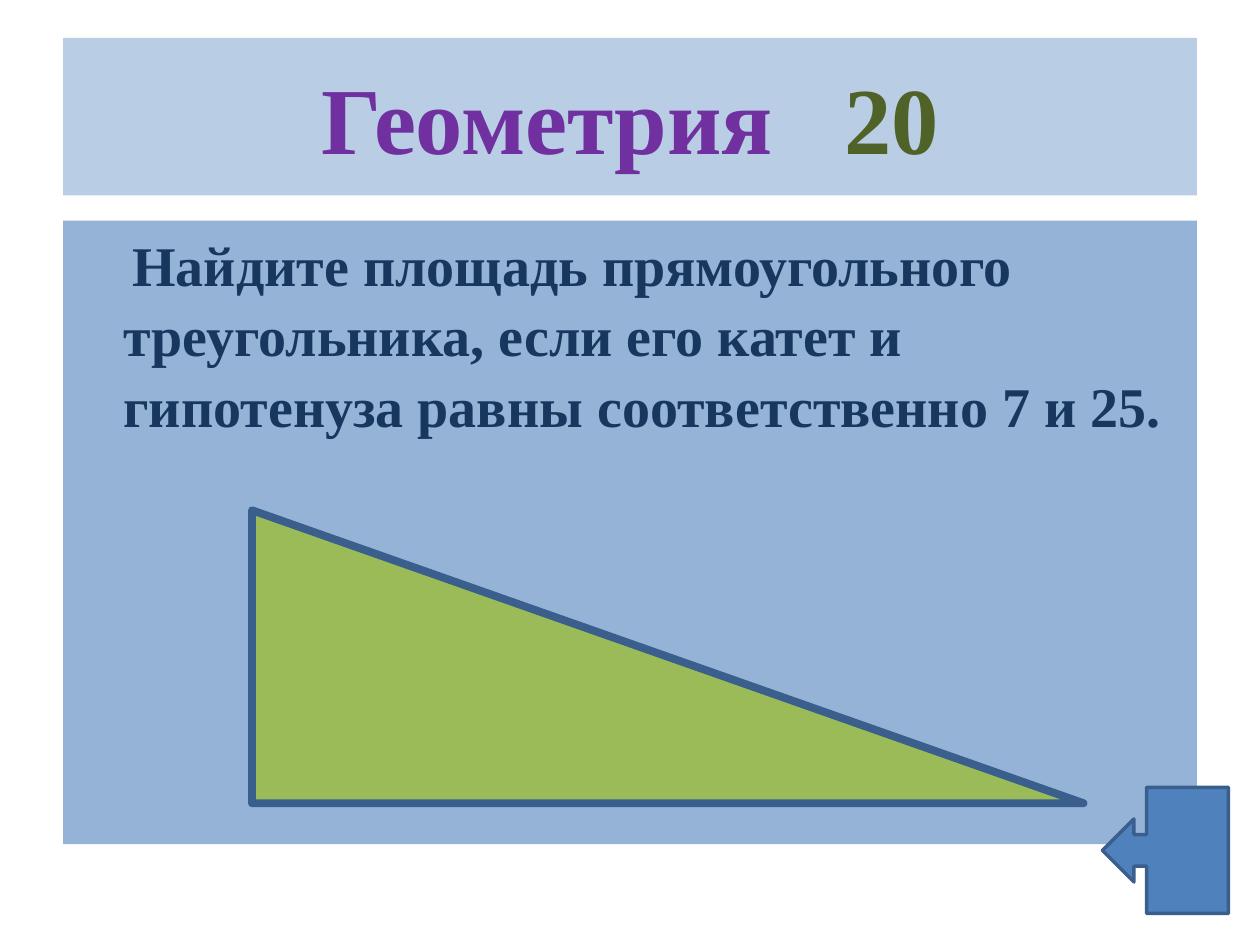
"""Builds a quiz slide about the area of a right triangle."""
import pptx
import pptx.util
import pptx.dml.color
import pptx.enum.shapes
import pptx.enum.text
import pptx.oxml.ns
import lxml.etree

WIDTH, HEIGHT = 10, 7.5
MARGIN = 0.05
FONT = "Times New Roman"
COLORS = {
    "title_fill": "B9CDE5",
    "body_fill": "95B3D7",
    "subject": "7030A0",
    "points": "4F6228",
    "question": "17375E",
    "triangle": "9BBB59",
    "arrow": "4F81BD",
    "outline": "3A5F8C",
}


def color(name):
    return pptx.dml.color.RGBColor.from_string(COLORS[name])


def box(left, top, width, height):
    shares = ((left, WIDTH), (top, HEIGHT), (width, WIDTH), (height, HEIGHT))
    return [pptx.util.Inches(share * length) for share, length in shares]


def fill_shape(shape, fill):
    shape.fill.solid()
    shape.fill.fore_color.rgb = color(fill)


def place_panel(shape, bounds, fill):
    shape.left, shape.top, shape.width, shape.height = box(*bounds)
    fill_shape(shape, fill)


def format_font(font, size, name):
    font.name = FONT
    font.size = pptx.util.Pt(size)
    font.bold = True
    font.color.rgb = color(name)


def add_title(slide, subject, points):
    title = slide.shapes.title
    place_panel(title, (MARGIN, 0.04, 1 - 2 * MARGIN, 1 / 6), "title_fill")
    title.text_frame.vertical_anchor = pptx.enum.text.MSO_ANCHOR.MIDDLE
    paragraph = title.text_frame.paragraphs[0]
    paragraph.alignment = pptx.enum.text.PP_ALIGN.CENTER
    for text, name in ((subject, "subject"), (" ", "subject"), (points, "points")):
        run = paragraph.add_run()
        run.text = text
        format_font(run.font, 54, name)
    gap = paragraph.runs[1]
    gap.font._element.set("spc", "2700")


def add_question(slide, text):
    body = slide.placeholders[1]
    place_panel(body, (MARGIN, 7 / 30, 1 - 2 * MARGIN, 0.66), "body_fill")
    body.text_frame.text = text
    paragraph = body.text_frame.paragraphs[0]
    paragraph.space_before = pptx.util.Pt(0)
    paragraph.line_spacing = 1.05
    properties = paragraph._p.get_or_add_pPr()
    properties.set("marL", str(pptx.util.Inches(0.38)))
    properties.set("indent", str(pptx.util.Inches(0.07)))
    lxml.etree.SubElement(properties, pptx.oxml.ns.qn("a:buNone"))
    format_font(paragraph.runs[0].font, 32, "question")


def add_figure(slide, kind, bounds, fill, line_width):
    shape = slide.shapes.add_shape(kind, *box(*bounds))
    shape.shadow.inherit = False
    fill_shape(shape, fill)
    shape.line.color.rgb = color("outline")
    shape.line.width = pptx.util.Pt(line_width)


def main():
    presentation = pptx.Presentation()
    presentation.slide_width = pptx.util.Inches(WIDTH)
    presentation.slide_height = pptx.util.Inches(HEIGHT)
    slide = presentation.slides.add_slide(presentation.slide_layouts[1])
    add_question(
        slide,
        "Найдите площадь прямоугольного треугольника, если его катет и "
        "гипотенуза равны соответственно 7 и 25.",
    )
    add_title(slide, "Геометрия", "20")
    kinds = pptx.enum.shapes.MSO_SHAPE
    add_figure(slide, kinds.RIGHT_TRIANGLE, (0.2, 0.54, 0.66, 0.31), "triangle", 4.5)
    add_figure(slide, kinds.LEFT_ARROW_CALLOUT, (7 / 8, 5 / 6, 1 / 10, 2 / 15), "arrow", 2)
    presentation.save("out.pptx")


if __name__ == "__main__":
    main()
